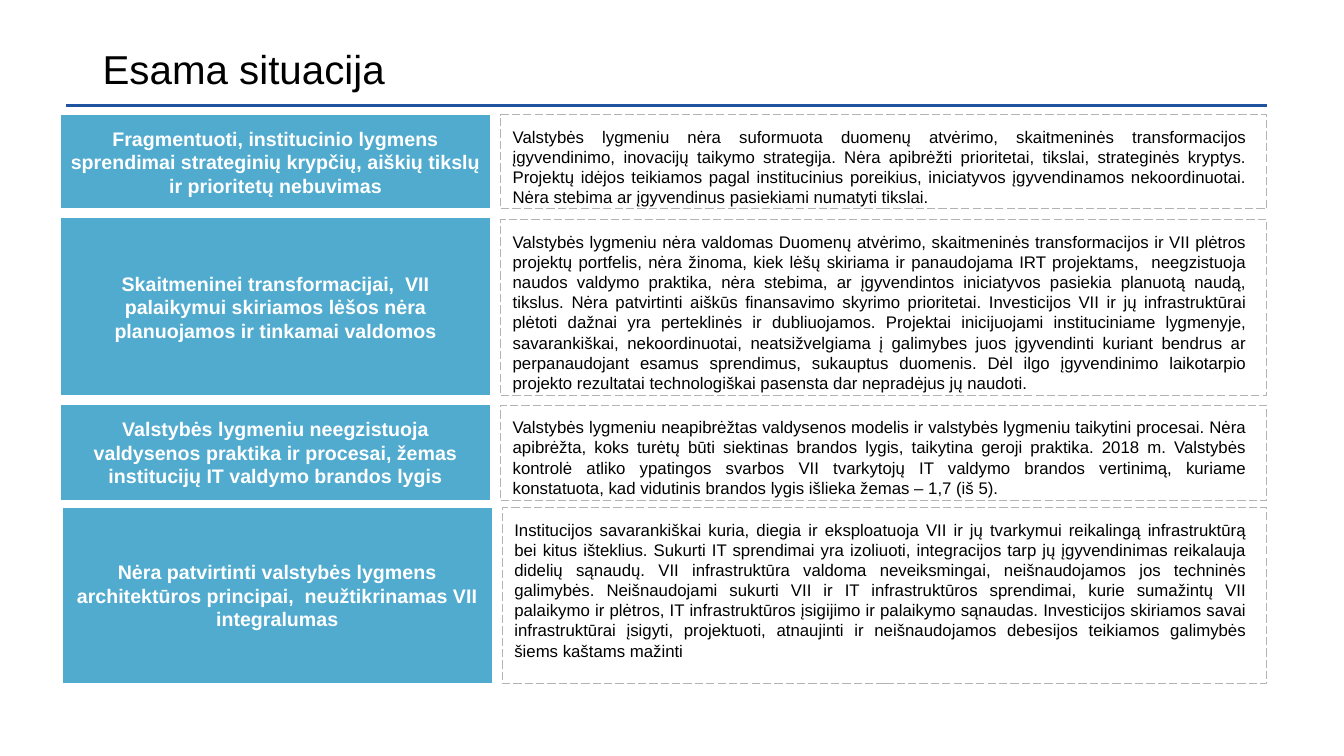
"""Build the slide on the current situation: problem labels beside their explanations."""
from dataclasses import dataclass

import pptx
import pptx.dml.color
import pptx.enum.dml
import pptx.enum.shapes
import pptx.enum.text
import pptx.oxml.ns
import pptx.util
from lxml import etree
from pptx.shapes.autoshape import Shape
from pptx.slide import Slide

Pt = pptx.util.Pt
Color = pptx.dml.color.RGBColor.from_string
Align = pptx.enum.text.PP_ALIGN
Anchor = pptx.enum.text.MSO_ANCHOR


@dataclass(frozen=True)
class Theme:
    font: str = "Arial"
    ink: str = "000000"
    paper: str = "FFFFFF"
    label: str = "50ABCF"
    rule: str = "1F529F"
    dash: str = "B3B3B3"
    title_size: float = 28.8
    label_size: float = 14
    detail_size: float = 12


@dataclass(frozen=True)
class Box:
    left: float
    top: float
    width: float
    height: float


@dataclass(frozen=True)
class Problem:
    label: str
    detail: str
    top: float
    height: float
    detail_drop: float = 0
    shift: float = 0


THEME = Theme()
LABEL_LEFT, LABEL_WIDTH = 43.2, 307.4
DETAIL_LEFT, RIGHT_EDGE = 357.7, 905

PROBLEMS = [
    Problem(
        "Fragmentuoti, institucinio lygmens sprendimai strateginių krypčių, aiškių tikslų ir prioritetų nebuvimas",
        "Valstybės lygmeniu nėra suformuota duomenų atvėrimo, skaitmeninės transformacijos įgyvendinimo, "
        "inovacijų taikymo strategija. Nėra apibrėžti prioritetai, tikslai, strateginės kryptys. Projektų idėjos "
        "teikiamos pagal institucinius poreikius, iniciatyvos įgyvendinamos nekoordinuotai. Nėra stebima ar "
        "įgyvendinus pasiekiami numatyti tikslai.",
        top=82, height=67),
    Problem(
        "Skaitmeninei transformacijai,  VII palaikymui skiriamos lėšos nėra planuojamos ir tinkamai valdomos",
        "Valstybės lygmeniu nėra valdomas Duomenų atvėrimo, skaitmeninės transformacijos ir VII plėtros projektų "
        "portfelis, nėra žinoma, kiek lėšų skiriama ir panaudojama IRT projektams,  neegzistuoja naudos valdymo "
        "praktika, nėra stebima, ar įgyvendintos iniciatyvos pasiekia planuotą naudą, tikslus. Nėra patvirtinti "
        "aiškūs finansavimo skyrimo prioritetai. Investicijos VII ir jų infrastruktūrai plėtoti dažnai yra "
        "perteklinės ir dubliuojamos. Projektai inicijuojami instituciniame lygmenyje, savarankiškai, "
        "nekoordinuotai, neatsižvelgiama į galimybes juos įgyvendinti kuriant bendrus ar perpanaudojant esamus "
        "sprendimus, sukauptus duomenis. Dėl ilgo įgyvendinimo laikotarpio projekto rezultatai technologiškai "
        "pasensta dar nepradėjus jų naudoti.",
        top=155.6, height=127.2, detail_drop=1.2),
    Problem(
        "Valstybės lygmeniu neegzistuoja valdysenos praktika ir procesai, žemas institucijų IT valdymo brandos lygis",
        "Valstybės lygmeniu neapibrėžtas valdysenos modelis ir valstybės lygmeniu taikytini procesai. Nėra "
        "apibrėžta, koks turėtų būti siektinas brandos lygis, taikytina geroji praktika. 2018 m. Valstybės "
        "kontrolė atliko ypatingos svarbos VII tvarkytojų IT valdymo brandos vertinimą, kuriame konstatuota, "
        "kad vidutinis brandos lygis išlieka žemas – 1,7 (iš 5).",
        top=288.8, height=69, detail_drop=0.6),
    Problem(
        "Nėra patvirtinti valstybės lygmens architektūros principai,  neužtikrinamas VII integralumas",
        "Institucijos savarankiškai kuria, diegia ir eksploatuoja VII ir jų tvarkymui reikalingą infrastruktūrą "
        "bei kitus išteklius. Sukurti IT sprendimai yra izoliuoti, integracijos tarp jų įgyvendinimas reikalauja "
        "didelių sąnaudų. VII infrastruktūra valdoma neveiksmingai, neišnaudojamos jos techninės galimybės. "
        "Neišnaudojami sukurti VII ir IT infrastruktūros sprendimai, kurie sumažintų VII palaikymo ir plėtros, "
        "IT infrastruktūros įsigijimo ir palaikymo sąnaudas. Investicijos skiriamos savai infrastruktūrai "
        "įsigyti, projektuoti, atnaujinti ir neišnaudojamos debesijos teikiamos galimybės šiems kaštams mažinti",
        top=362.4, height=126, shift=1.2),
]


def write_text(shape: Shape, text: str, *, size: float, color: str = THEME.ink, bold: bool = False,
               align: Align = Align.LEFT, anchor: Anchor = Anchor.TOP, line_spacing: float = 1.0,
               insets: tuple[float, float, float, float] = (7.2, 3.6, 7.2, 3.6)) -> None:
    """Write one formatted paragraph into a shape."""
    frame = shape.text_frame
    frame.word_wrap = True
    frame.vertical_anchor = anchor
    frame.margin_left, frame.margin_top, frame.margin_right, frame.margin_bottom = map(Pt, insets)
    paragraph = frame.paragraphs[0]
    paragraph.text = text
    paragraph.alignment = align
    paragraph.line_spacing = line_spacing
    font = paragraph.runs[0].font
    font.name, font.size, font.bold = THEME.font, Pt(size), bold
    font.color.rgb = Color(color)


def add_rectangle(slide: Slide, box: Box, *, line: str, fill: str | None = None, dashed: bool = False) -> Shape:
    """Add a thinly outlined rectangle, unfilled unless a fill is given."""
    shape = slide.shapes.add_shape(pptx.enum.shapes.MSO_SHAPE.RECTANGLE,
                                   Pt(box.left), Pt(box.top), Pt(box.width), Pt(box.height))
    shape.shadow.inherit = False
    if fill:
        shape.fill.solid()
        shape.fill.fore_color.rgb = Color(fill)
    else:
        shape.fill.background()
    shape.line.color.rgb = Color(line)
    shape.line.width = Pt(0.75)
    if dashed:
        shape.line.dash_style = pptx.enum.dml.MSO_LINE.LONG_DASH
    return shape


def add_title(slide: Slide, text: str) -> None:
    """Add the title and the rule beneath it."""
    title = slide.shapes.add_textbox(Pt(66.2), Pt(28), Pt(838.8), Pt(41.8))
    write_text(title, text, size=THEME.title_size, anchor=Anchor.BOTTOM, line_spacing=0.9)
    rule = slide.shapes.add_connector(pptx.enum.shapes.MSO_CONNECTOR.STRAIGHT,
                                      Pt(47), Pt(75.4), Pt(RIGHT_EDGE), Pt(75.4))
    rule.line.color.rgb = Color(THEME.rule)
    rule.line.width = Pt(1.5)
    etree.SubElement(rule.element.spPr, pptx.oxml.ns.qn("a:effectLst"))


def add_problem(slide: Slide, problem: Problem) -> None:
    """Add a problem label with its explanation to the right."""
    label = add_rectangle(slide, Box(LABEL_LEFT + problem.shift, problem.top, LABEL_WIDTH, problem.height),
                          line=THEME.paper, fill=THEME.label)
    write_text(label, problem.label, size=THEME.label_size, color=THEME.paper, bold=True,
               align=Align.CENTER, anchor=Anchor.MIDDLE)
    left = DETAIL_LEFT + problem.shift
    detail = add_rectangle(slide, Box(left, problem.top + problem.detail_drop, RIGHT_EDGE - left,
                                      problem.height - problem.detail_drop),
                           line=THEME.dash, dashed=True)
    write_text(detail, problem.detail, size=THEME.detail_size, align=Align.JUSTIFY,
               insets=(8.5, 8.5, 14.2, 0))


def main() -> None:
    """Build and save the presentation."""
    presentation = pptx.Presentation()
    presentation.slide_width, presentation.slide_height = Pt(960), Pt(540)
    slide = presentation.slides.add_slide(presentation.slide_layouts[6])
    add_title(slide, "Esama situacija")
    for problem in PROBLEMS:
        add_problem(slide, problem)
    presentation.save("out.pptx")


if __name__ == "__main__":
    main()
